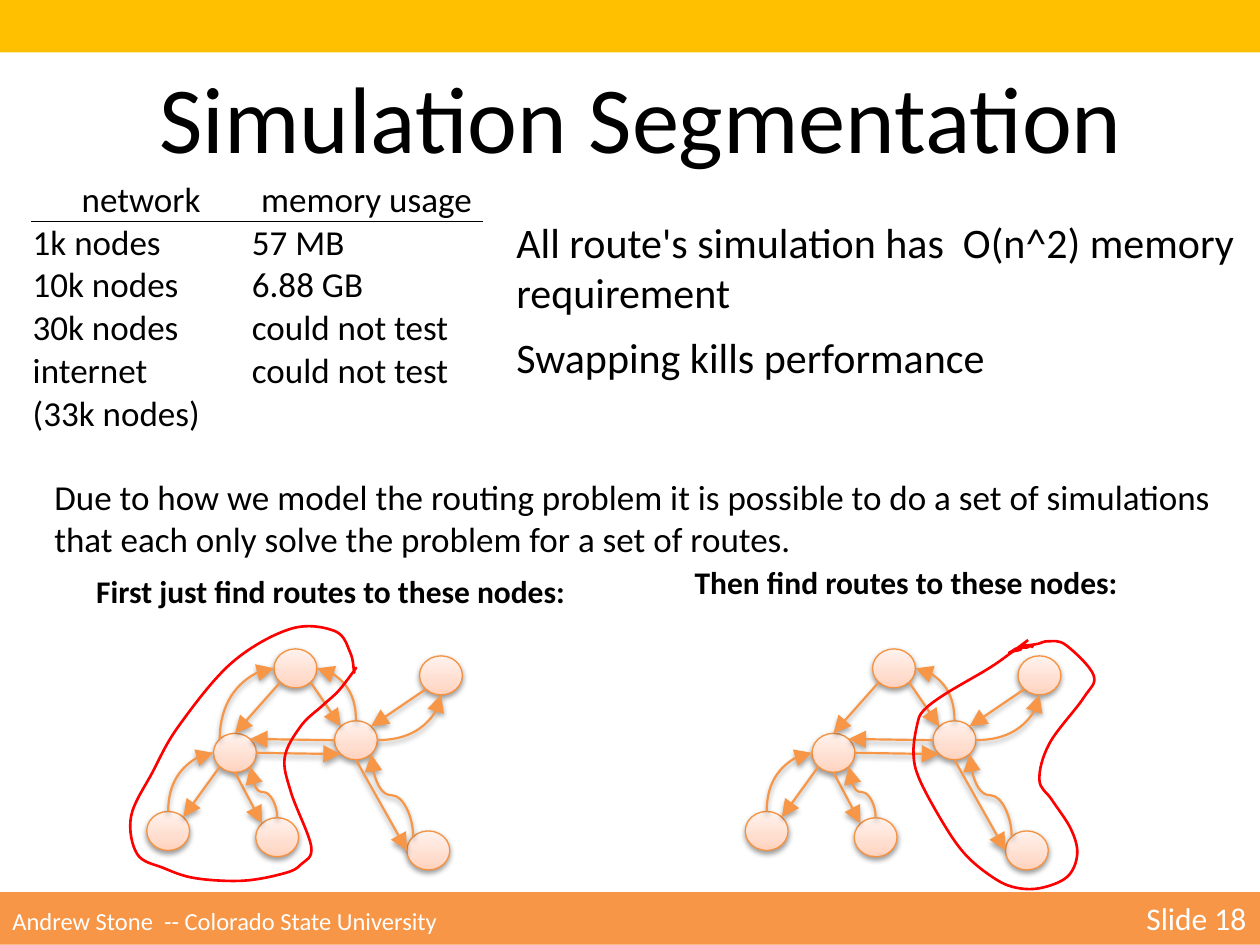
import copy

import lxml.etree
import pptx
import pptx.dml.color
import pptx.enum.shapes
import pptx.enum.text
import pptx.oxml
import pptx.oxml.ns
import pptx.util

RGB = pptx.dml.color.RGBColor
Pt = pptx.util.Pt
Shape = pptx.enum.shapes.MSO_SHAPE
Link = pptx.enum.shapes.MSO_CONNECTOR
Align = pptx.enum.text.PP_ALIGN
Anchor = pptx.enum.text.MSO_ANCHOR
qn = pptx.oxml.ns.qn

BLACK = RGB(0x00, 0x00, 0x00)
WHITE = RGB(0xFF, 0xFF, 0xFF)
GOLD = RGB(0xFF, 0xC0, 0x00)
ORANGE = RGB(0xF7, 0x96, 0x46)
NODE_EDGE = RGB(0xF6, 0x92, 0x40)
RED = RGB(0xFF, 0x00, 0x00)
NODE_STOPS = [(0, RGB(0xFF, 0xD2, 0xBD)), (0.35, RGB(0xFF, 0xDE, 0xD0)), (1, RGB(0xFF, 0xF2, 0xED))]

deck = pptx.Presentation()
deck.slide_width = pptx.util.Inches(10)
deck.slide_height = pptx.util.Inches(7.5)
page = deck.slides.add_slide(deck.slide_layouts[6])
CELL = deck.slide_width / 100


def grid(*cells):
    """Turn counts of cells, on a grid of 100 columns and 75 rows, into lengths."""
    return [pptx.util.Emu(round(count * CELL)) for count in cells]


def add_shadow(item, distance, opacity):
    properties = item._element.spPr
    effects = lxml.etree.SubElement(properties, qn("a:effectLst"))
    shadow = lxml.etree.SubElement(effects, qn("a:outerShdw"), blurRad=str(Pt(3.1)),
                                   dist=str(Pt(distance)), dir="5400000", rotWithShape="0")
    color = lxml.etree.SubElement(shadow, qn("a:srgbClr"), val=str(BLACK))
    lxml.etree.SubElement(color, qn("a:alpha"), val=str(opacity * 1000))


# Bands at the top and bottom
bands = []
for top, color in [(0, GOLD), (70.8, ORANGE)]:
    band = page.shapes.add_shape(Shape.RECTANGLE, *grid(0, top, 100, 4.17))
    band.shadow.inherit = False
    band.fill.solid()
    band.fill.fore_color.rgb = color
    band.line.fill.background()
    bands.append(band)

footer = bands[-1].text_frame
footer.vertical_anchor = Anchor.MIDDLE
para = footer.paragraphs[0]
para.alignment = Align.LEFT
tabs = lxml.etree.SubElement(para._p.get_or_add_pPr(), qn("a:tabLst"))
lxml.etree.SubElement(tabs, qn("a:tab"), pos=str(grid(90)[0]), algn="l")
for text, size in [("Andrew Stone  -- Colorado State University \t", 14), ("Slide 18", 18)]:
    span = para.add_run()
    span.text = text
    for name, value in {"size": Pt(size), "name": "Calibri"}.items():
        setattr(span.font, name, value)
    span.font.color.rgb = WHITE

# Text boxes: place, wrapping, alignment, font, paragraphs
text_boxes = [
    ((11.2, 4.2, 79.3, 10.1), False, Align.CENTER, {"size": Pt(54)}, ["Simulation Segmentation"]),
    ((40, 16.7, 60, 14.3), True, Align.LEFT, {"size": Pt(24)},
     ["All route's simulation has  O(n^2) memory requirement", "Swapping kills performance"]),
    ((6.65, 44.9, 39.6, 4), False, Align.LEFT, {"size": Pt(18), "bold": True},
     ["First just find routes to these nodes:"]),
    ((54.15, 44.2, 35.9, 4), False, Align.LEFT, {"size": Pt(18), "bold": True},
     ["Then find routes to these nodes:"]),
    ((3.33, 37.25, 94.2, 11.1), True, Align.LEFT, {"size": Pt(20)},
     ["Due to how we model the routing problem it is possible to do a set of simulations "
      "that each only solve the problem for a set of routes."]),
]
for place, wrap, alignment, font, texts in text_boxes:
    box = page.shapes.add_textbox(*grid(*place))
    box.text_frame.word_wrap = wrap
    for index, text in enumerate(texts):
        para = box.text_frame.paragraphs[0] if index == 0 else box.text_frame.add_paragraph()
        para.alignment = alignment
        para.space_before = Pt(8 if index else 0)
        span = para.add_run()
        span.text = text
        for name, value in {"name": "Calibri", **font}.items():
            setattr(span.font, name, value)
        span.font.color.rgb = BLACK

# Memory usage table
usage = [
    ("network", "memory usage"),
    ("1k nodes", "57 MB"),
    ("10k nodes", "6.88 GB"),
    ("30k nodes", "could not test"),
    ("internet\n(33k nodes)", "could not test"),
]
anchors = [Anchor.MIDDLE, Anchor.BOTTOM, Anchor.BOTTOM, Anchor.BOTTOM, Anchor.TOP]
table = page.shapes.add_table(len(usage), 2, *grid(2.5, 14.2, 35.8, 20.4)).table
table.first_row = table.horz_banding = False
for column, width in zip(table.columns, grid(17.4, 18.4)):
    column.width = width
for row, height in zip(table.rows, grid(3.4, 3.4, 3.4, 3.4, 6.8)):
    row.height = height
for row_index, (texts, anchor) in enumerate(zip(usage, anchors)):
    for column_index, text in enumerate(texts):
        cell = table.cell(row_index, column_index)
        cell.text = text
        cell.vertical_anchor = anchor
        cell.margin_left = cell.margin_right = grid(0.1)[0]
        cell.margin_top = cell.margin_bottom = 0
        for para in cell.text_frame.paragraphs:
            para.alignment = Align.LEFT if row_index else Align.CENTER
            for name, value in {"size": Pt(20), "name": "Calibri"}.items():
                setattr(para.runs[0].font, name, value)
            para.runs[0].font.color.rgb = BLACK
        if row_index < 2:
            side = "a:lnT" if row_index else "a:lnB"
            border = lxml.etree.SubElement(cell._tc.get_or_add_tcPr(), qn(side), w=str(Pt(0.5)))
            paint = lxml.etree.SubElement(border, qn("a:solidFill"))
            lxml.etree.SubElement(paint, qn("a:srgbClr"), val=str(BLACK))
        cell.fill.background()

# Network graphs: nodes by centre, edges between compass points of the nodes
NODE_WIDTH, NODE_HEIGHT = 3.4, 3.1
nodes = {"top": (23.45, 53.05), "hub": (28.25, 58.75), "west": (18.65, 59.75),
         "middle": (22, 66.45), "east": (35, 53.6), "left": (13.35, 65.95), "south": (34, 67.5)}
compass = {"N": (0, -1), "S": (0, 1), "W": (-1, 0), "E": (1, 0),
           "NW": (-0.71, -0.71), "NE": (0.71, -0.71), "SW": (-0.71, 0.71), "SE": (0.71, 0.71)}
edges = [
    ("top", "SE", "hub", "NW", "line"),
    ("hub", "N", "top", "E", "curvedConnector2"),
    ("top", "SW", "west", "N", "line"),
    ("hub", "E", "east", "S", "curvedConnector2"),
    ("south", "NW", "hub", "SE", "curvedConnector3"),
    ("west", "SW", "left", "NE", "line"),
    ("west", "S", "middle", "NW", "line"),
    ("hub", "S", "south", "W", "line"),
    ("east", "SW", "hub", "NE", "line"),
    ("hub", "W", "west", "NE", "line"),
    ("west", "E", "hub", "SW", "line"),
    ("left", "N", "west", "W", "curvedConnector2"),
    ("middle", "N", "west", "SE", "curvedConnector3"),
]
first_only = [("west", "NW", "top", "W", "curvedConnector2")]

for shift, graph_edges in [(0, first_only + edges), (47.5, edges)]:
    graph = page.shapes.add_group_shape()
    for x, y in nodes.values():
        node = graph.shapes.add_shape(Shape.OVAL, *grid(
            x + shift - NODE_WIDTH / 2, y - NODE_HEIGHT / 2, NODE_WIDTH, NODE_HEIGHT))
        node.fill.gradient()
        node.fill.gradient_angle = 90
        stop_list = node._element.spPr.find(".//" + qn("a:gsLst"))
        stop_list.append(copy.deepcopy(stop_list[0]))
        for stop, (position, color) in zip(node.fill.gradient_stops, NODE_STOPS):
            stop.position = position
            stop.color.rgb = color
        node.line.color.rgb = NODE_EDGE
        node.line.width = Pt(0.75)
        add_shadow(node, 1.6, 38)

    for source, source_side, target, target_side, kind in graph_edges:
        (x1, y1), (x2, y2) = [
            (nodes[name][0] + shift + compass[side][0] * NODE_WIDTH / 2,
             nodes[name][1] + compass[side][1] * NODE_HEIGHT / 2)
            for name, side in [(source, source_side), (target, target_side)]]
        turn = 0
        if kind != "line" and source_side != "E":
            # A curve that leaves upwards is a sideways curve turned a quarter
            turn, sign = (270, 1) if x2 < x1 else (90, -1)
            middle_x, middle_y = (x1 + x2) / 2, (y1 + y2) / 2
            half_run, half_rise = abs(x2 - x1) / 2, (y1 - y2) / 2
            x1, x2 = middle_x - sign * half_rise, middle_x + sign * half_rise
            y1, y2 = middle_y + half_run, middle_y - half_run
        edge = graph.shapes.add_connector(
            Link.STRAIGHT if kind == "line" else Link.CURVE, *grid(x1, y1, x2, y2))
        properties = edge._element.spPr
        properties.find(qn("a:prstGeom")).set("prst", kind)
        if turn:
            properties.find(qn("a:xfrm")).set("rot", str(turn * 60000))
        edge.line.color.rgb = ORANGE
        edge.line.width = Pt(1.25)
        lxml.etree.SubElement(properties.find(qn("a:ln")), qn("a:tailEnd"),
                              type="triangle", w="lg", len="lg")
        add_shadow(edge, 1.8, 35)

# Hand-drawn loops around the chosen nodes, each a list of strokes
second_loop = [
    [(81.6, 50.8), (80, 52), (78.4, 53.1), (75, 55.1), (73.3, 56.4), (72.8, 57.5), (72.5, 59.8),
     (73, 61.9), (74.9, 65.4), (76.6, 67.8), (78.6, 69.5), (80.4, 70.4), (82.5, 70.5),
     (84.7, 69.6), (85.5, 67.8), (85, 65.8), (83.5, 63.5), (82.5, 61.9), (83.3, 59), (86, 55.4),
     (86.8, 53.6), (84.6, 51.2), (83.2, 50.9), (82.4, 51.1), (81.8, 51.2), (81, 51.2)],
    [(81.1, 51.5), (80.9, 51.6), (80.4, 51.7), (80.2, 51.8), (80.1, 51.8), (80.3, 51.7),
     (80.6, 51.5), (80.8, 51.5), (80.9, 51.4), (81.3, 51.4), (81.5, 51.4), (81.7, 51.3),
     (81.9, 51.3), (82, 51.4)],
]
first_loop = [
    [(28.1, 53.2), (28.2, 53.1), (26.9, 54.8), (25.6, 56), (23.9, 57.6), (22.6, 60.1),
     (23.1, 62.9), (24.7, 67.2), (23.9, 68.6), (22.6, 69.3), (19.3, 69.9), (15.5, 69.7),
     (13, 68.9), (10.9, 67.8), (10.4, 64.8), (12.1, 61.3), (14.2, 57.6), (18.4, 52.6),
     (23.1, 49.9), (26.6, 50.1), (27.8, 51.8), (28.1, 53.3), (28.1, 53.2)],
]
for strokes in [second_loop, first_loop]:
    builder = page.shapes.build_freeform(*grid(*strokes[0][0]))
    builder.add_line_segments([grid(*point) for point in strokes[0][1:]], close=False)
    for stroke in strokes[1:]:
        builder.move_to(*grid(*stroke[0]))
        builder.add_line_segments([grid(*point) for point in stroke[1:]], close=False)
    loop = builder.convert_to_shape()
    loop.shadow.inherit = False
    loop.fill.background()
    loop.line.color.rgb = RED
    loop.line.width = Pt(1.5)

    # Bend each straight segment into a Bezier curve through the same points
    segments = iter(list(loop._element.spPr.find(".//" + qn("a:path"))))
    for stroke in strokes:
        drawn = [next(segments) for _ in stroke]
        points = [(int(segment[0].get("x")), int(segment[0].get("y"))) for segment in drawn]
        padded = [points[0], *points, points[-1]]
        for segment, *around in zip(drawn[1:], padded, padded[1:], padded[2:], padded[3:]):
            before, start, end, after = around
            curve = lxml.etree.Element(qn("a:cubicBezTo"))
            controls = [[s + (e - b) / 6 for b, s, e in zip(before, start, end)],
                        [e - (a - s) / 6 for s, e, a in zip(start, end, after)], end]
            for x, y in controls:
                lxml.etree.SubElement(curve, qn("a:pt"), x=str(round(x)), y=str(round(y)))
            segment.getparent().replace(segment, curve)

deck.save("out.pptx")
